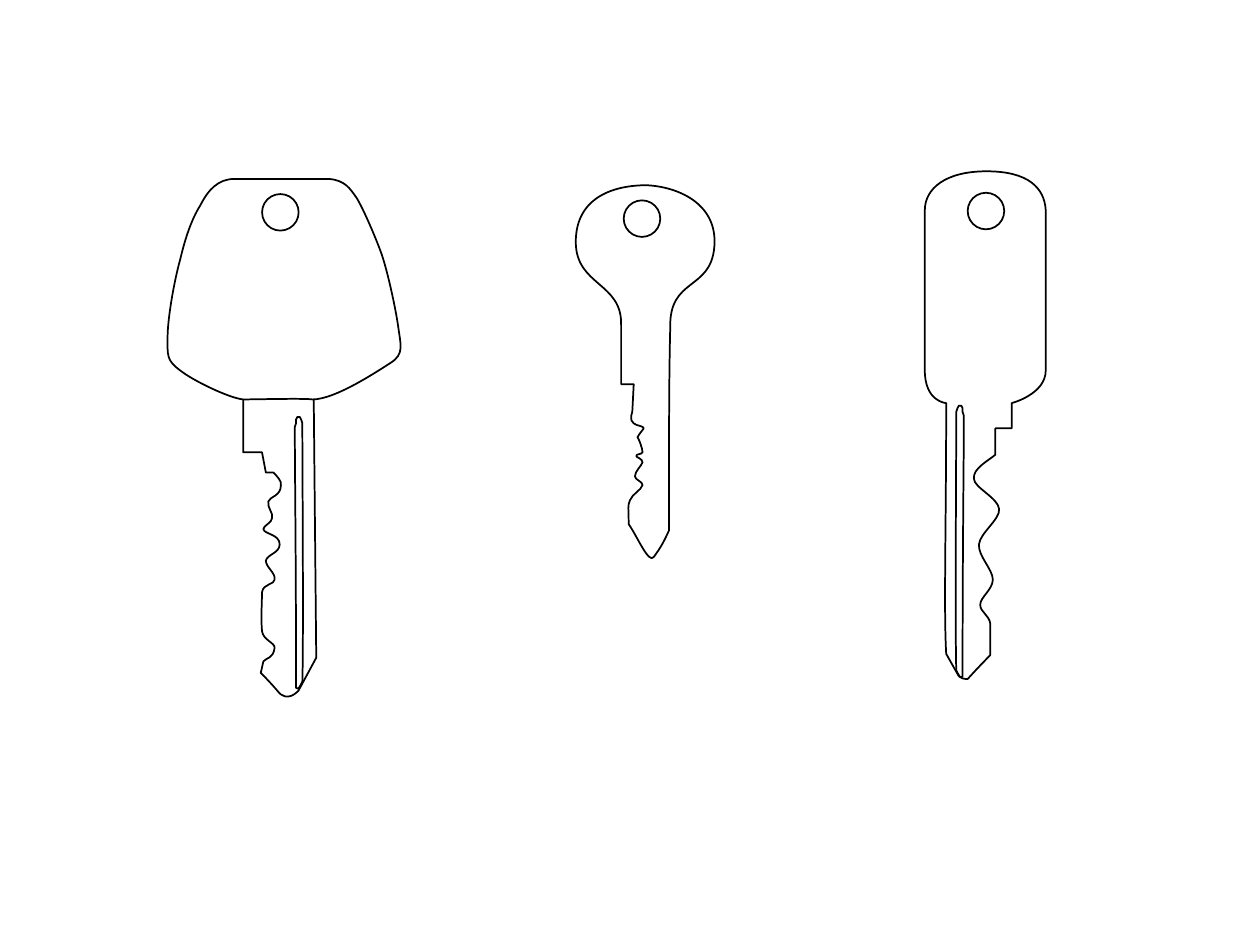
import pptx
import pptx.dml.color
import pptx.enum.shapes
import pptx.oxml.ns
import pptx.util

Inches = pptx.util.Inches
qn = pptx.oxml.ns.qn

COLORS = {"paper": "FFFFFF", "ink": "000000"}
UNIT = Inches(0.01)
RING_SIZE = Inches(0.29)
GROOVE_WIDTH = 7

CAR_BLADE = """M 61 172 L 61 217 76 217 79 233 85 233
C 87 235 92 240 91 243 91 252 82 252 81 256 80 261 85 265 84 269
84 273 77 275 77 278 78 282 90 282 90 290 90 297 80 298 79 303
79 308 87 313 86 318 86 322 77 321 76 328 76 335 75 349 76 359
77 366 86 368 86 372 85 381 79 380 77 383 L 75 392
C 75 392 82 399 88 406 96 417 105 406 105 406 L 119 380 117 172 61 172"""
CAR_HEAD = """M 178 146 C 167 153 134 175 116 175 110 174 71 175 61 175
50 174 21 160 11 152 0 144 1 140 1 126 1 111 6 82 11 64
15 47 20 32 27 21 33 9 41 0 54 0 67 0 117 0 129 0
142 1 146 8 151 15 156 23 166 46 171 60 176 75 182 103 184 117
186 132 189 139 178 146"""
ROUND_KEY = """M 110 49 C 113 14 80 1 56 0 31 0 0 9 0 45 0 80 37 77 36 111
L 36 131 36 158 46 158 45 178
C 45 182 44 181 44 183 44 187 44 187 46 189 48 191 54 191 54 193
51 197 50 198 49 200 50 201 53 209 53 212 52 214 48 213 48 215
48 216 53 217 53 220 52 223 47 227 47 231 47 234 53 235 53 238
52 242 45 245 43 250 41 255 42 255 42 269 49 279 58 301 62 295
67 288 69 285 74 274 74 192 74 154 75 113 74 73 107 84 110 49"""
LONG_KEY = """M 17 383 C 15 347 17 283 17 184 17 184 0 183 0 158
0 131 0 65 0 31 0 14 16 0 49 0 82 0 95 13 96 31
96 94 96 158 96 158 96 177 69 184 69 184 L 69 204 56 204
C 56 204 56 215 56 225 50 230 38 236 39 244 39 251 58 259 59 268
60 276 44 287 43 296 42 305 54 316 54 324 54 332 44 338 44 344
44 350 51 352 52 359 L 52 384
C 52 384 43 393 34 403 27 403 26 399 26 399 L 17 383"""
GROOVE = """M 6 8 L 6 5 5 2 4 0 3 0 2 0 1 2 1 5 0 8
C 0 43 1 111 1 215 3 216 3 216 6 210 7 176 6 42 6 8"""


def read_outline(outline):
    points, segments, command = [], [], ""
    tokens = iter(outline.split())
    for token in tokens:
        if token.isalpha():
            command = token
            continue
        points.append((int(token), int(next(tokens))))
        if command == "L":
            segments.append(1)
        elif command == "C":
            if segments and segments[-1] < 0:
                segments[-1] += 1
                if segments[-1] == 0:
                    segments[-1] = 3
            else:
                segments.append(-2)
    return points, segments


def style(sp, filled):
    sp.shadow.inherit = False
    if filled:
        sp.fill.solid()
        sp.fill.fore_color.rgb = pptx.dml.color.RGBColor.from_string(COLORS["paper"])
    else:
        sp.fill.background()
    sp.line.color.rgb = pptx.dml.color.RGBColor.from_string(COLORS["ink"])
    sp.line.width = pptx.util.Pt(1)


def add_outline(shapes, outline, left, top, filled=False, mirror_width=None):
    points, segments = read_outline(outline)
    if mirror_width is not None:
        points = [(mirror_width - x, y) for x, y in points]
    builder = shapes.build_freeform(*points[0], scale=UNIT)
    builder.add_line_segments(points[1:], close=True)
    sp = builder.convert_to_shape(left, top)
    steps = iter(list(sp._element.iter(qn("a:lnTo"))))
    for count in segments:
        step = next(steps)
        if count == 3:
            step.tag = qn("a:cubicBezTo")
            for _ in range(2):
                extra = next(steps)
                step.append(extra[0])
                extra.getparent().remove(extra)
    style(sp, filled)


def add_ring(shapes, left, top):
    oval = pptx.enum.shapes.MSO_SHAPE.OVAL
    style(shapes.add_shape(oval, left, top, RING_SIZE, RING_SIZE), filled=True)


def add_car_key(s, left, top):
    shapes = s.shapes.add_group_shape().shapes
    add_outline(shapes, CAR_BLADE, left, top, filled=True)
    add_outline(shapes, CAR_HEAD, left, top, filled=True)
    add_ring(shapes, left + Inches(0.76), top + Inches(0.12))
    add_outline(shapes, GROOVE, left + Inches(1.02), top + Inches(1.89))


def add_round_key(s, left, top):
    shapes = s.shapes.add_group_shape().shapes
    add_outline(shapes, ROUND_KEY, left, top)
    add_ring(shapes, left + Inches(0.38), top + Inches(0.12))


def add_long_key(s, left, top):
    shapes = s.shapes.add_group_shape().shapes
    add_outline(shapes, LONG_KEY, left, top)
    add_outline(shapes, GROOVE, left + Inches(0.24), top + Inches(1.86),
                mirror_width=GROOVE_WIDTH)
    add_ring(shapes, left + Inches(0.34), top + Inches(0.17))


def main():
    prs = pptx.Presentation()
    prs.slide_width, prs.slide_height = Inches(10), Inches(7.5)
    s = prs.slides.add_slide(prs.slide_layouts[6])
    add_car_key(s, Inches(1.32), Inches(1.42))
    add_round_key(s, Inches(4.57), Inches(1.47))
    add_long_key(s, Inches(7.34), Inches(1.36))
    prs.save("out.pptx")


if __name__ == "__main__":
    main()
